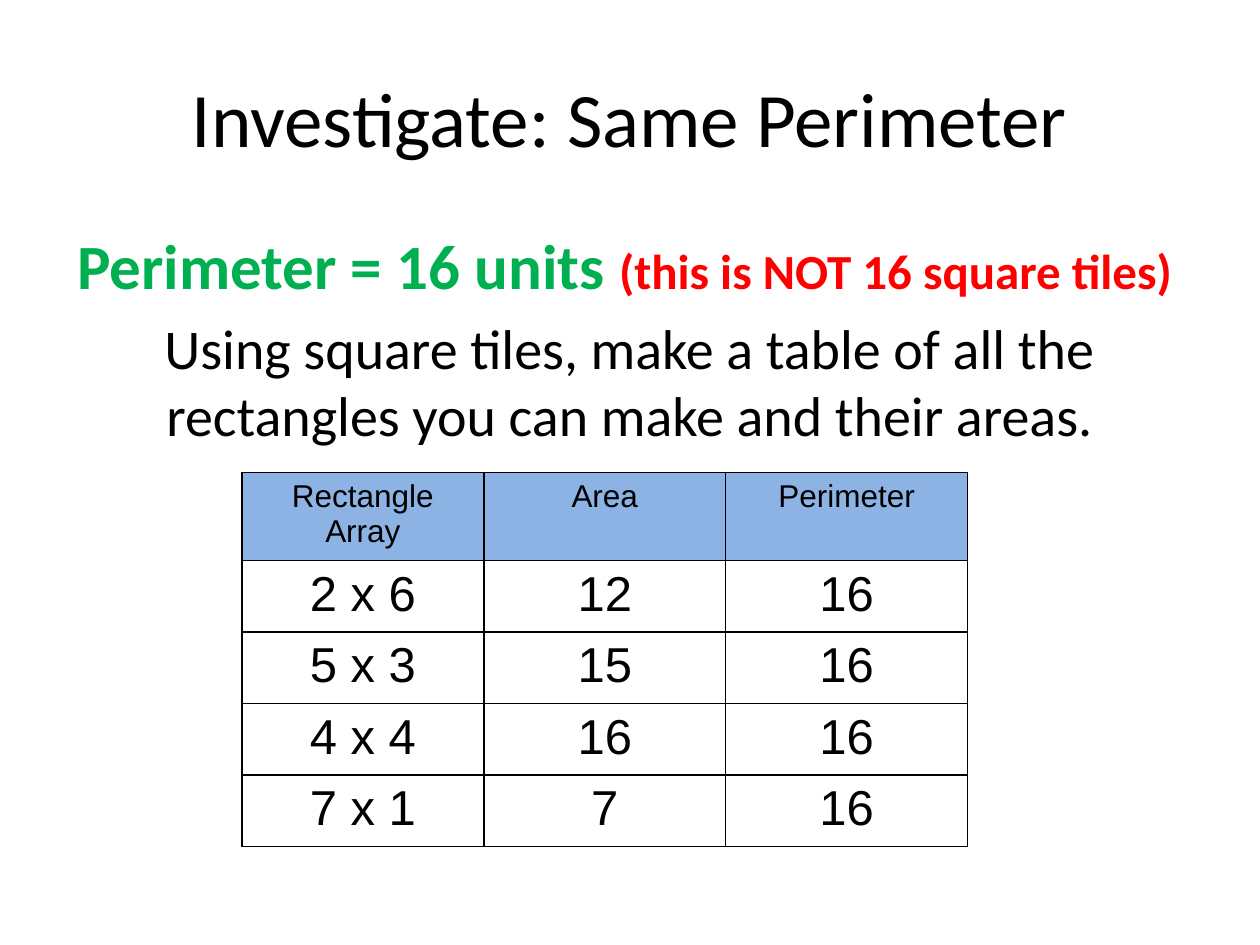
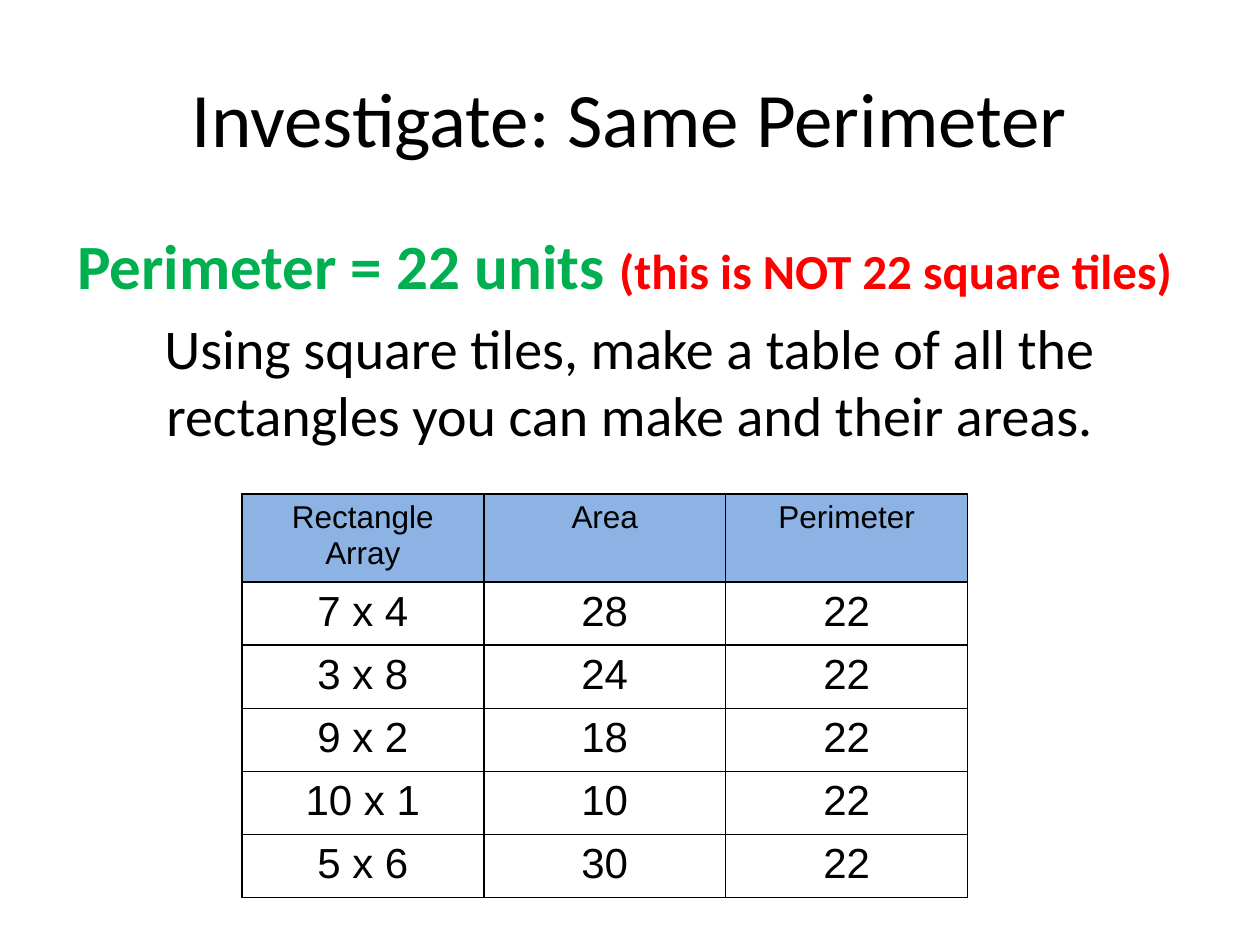
from lxml.etree import SubElement
from pptx import Presentation
from pptx.dml.color import RGBColor
from pptx.enum.text import MSO_ANCHOR as Anchor, PP_ALIGN as Align
from pptx.oxml.ns import qn
from pptx.util import Inches, Pt

BLACK, GREEN, RED, HEADER_BLUE = "000000", "00B050", "FF0000", "8CB3E3"
TITLE = "Investigate: Same Perimeter"
TASK = ("Using square tiles, make a table of all the rectangles "
        "you can make and their areas.")
HEADERS = ["Rectangle Array", "Area", "Perimeter"]
COLUMN_WIDTH = 1.92
HEADER_HEIGHT = 0.66

INVESTIGATIONS = [
    dict(perimeter=16, top=3.75, size=28, row_height=0.53,
         rectangles=[(2, 6), (5, 3), (4, 4), (7, 1)]),
    dict(perimeter=22, top=3.92, size=24, row_height=0.47,
         rectangles=[(7, 4), (3, 8), (9, 2), (10, 1), (5, 6)]),
]


def color(hex_string):
    return RGBColor.from_string(hex_string)


def add_text(paragraph, text, size, font="Calibri", fill=BLACK, bold=False):
    paragraph.alignment = Align.CENTER
    run = paragraph.add_run()
    run.text = text
    run.font.size = Pt(size)
    run.font.name = font
    run.font.bold = bold
    run.font.color.rgb = color(fill)


def add_text_frame(slide, top, height, anchor=Anchor.TOP):
    box = slide.shapes.add_textbox(Inches(0.5), Inches(top), Inches(9), Inches(height))
    frame = box.text_frame
    frame.word_wrap = True
    frame.vertical_anchor = anchor
    return frame


def add_title(slide):
    frame = add_text_frame(slide, 0.3, 1.25, Anchor.MIDDLE)
    add_text(frame.paragraphs[0], TITLE, 44)


def add_instructions(slide, perimeter):
    frame = add_text_frame(slide, 1.75, 4.95)
    heading = frame.paragraphs[0]
    add_text(heading, f"Perimeter = {perimeter} units ", 36, fill=GREEN, bold=True)
    add_text(heading, f"(this is NOT {perimeter} square tiles) ", 28, fill=RED, bold=True)
    task = frame.add_paragraph()
    task.space_before = Pt(6.4)
    add_text(task, TASK, 32)


def set_borders(cell):
    properties = cell._tc.get_or_add_tcPr()
    for index, side in enumerate(("a:lnL", "a:lnR", "a:lnT", "a:lnB")):
        line = properties.makeelement(qn(side), {"w": str(Pt(1))})
        fill = SubElement(line, qn("a:solidFill"))
        SubElement(fill, qn("a:srgbClr"), val=BLACK)
        properties.insert(index, line)


def fill_cell(cell, text, size, background=None):
    add_text(cell.text_frame.paragraphs[0], text, size, font="Arial")
    if background:
        cell.fill.solid()
        cell.fill.fore_color.rgb = color(background)
    else:
        cell.fill.background()
    set_borders(cell)


def add_rectangle_table(slide, perimeter, top, size, row_height, rectangles):
    heights = [HEADER_HEIGHT] + [row_height] * len(rectangles)
    table = slide.shapes.add_table(
        len(heights), len(HEADERS), Inches(1.92), Inches(top),
        Inches(COLUMN_WIDTH * len(HEADERS)), Inches(sum(heights))).table
    table.first_row = table.horz_banding = False
    for row, height in zip(table.rows, heights):
        row.height = Inches(height)
    for column, header in enumerate(HEADERS):
        fill_cell(table.cell(0, column), header, 18, HEADER_BLUE)
    for row, (length, width) in enumerate(rectangles, start=1):
        values = [f"{length} x {width}", str(length * width), str(perimeter)]
        for column, value in enumerate(values):
            fill_cell(table.cell(row, column), value, size)


def main():
    presentation = Presentation()
    presentation.slide_width = Inches(10)
    presentation.slide_height = Inches(7.5)
    for investigation in INVESTIGATIONS:
        slide = presentation.slides.add_slide(presentation.slide_layouts[6])
        add_title(slide)
        add_instructions(slide, investigation["perimeter"])
        add_rectangle_table(slide, **investigation)
    presentation.save("out.pptx")


if __name__ == "__main__":
    main()
